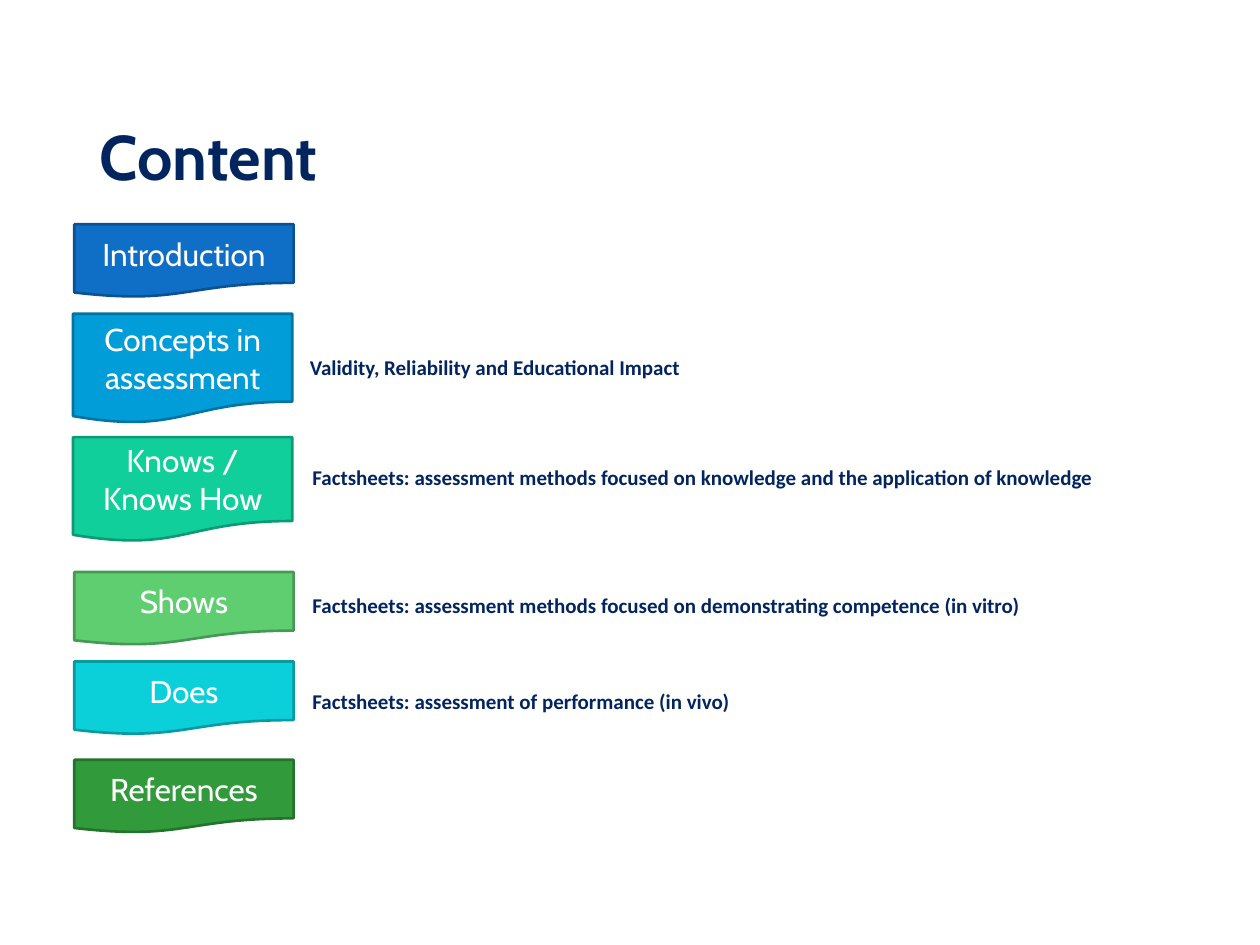
from dataclasses import dataclass

from pptx import Presentation
from pptx.dml.color import RGBColor
from pptx.enum.shapes import MSO_SHAPE
from pptx.enum.text import MSO_ANCHOR, PP_ALIGN
from pptx.util import Inches, Pt


@dataclass(frozen=True)
class Theme:
    navy: str = "02255F"
    white: str = "FFFFFF"
    heading_font: str = "Cabin"
    body_font: str = "Calibri"
    title_size: int = 36
    topic_size: int = 18
    detail_size: int = 12
    detail_leading: int = 14
    outline_width: float = 1.5


THEME = Theme()
TOPIC_WIDTH = 1.74

# Topic, left, top, height, fill, outline
TOPICS = [
    ("Introduction", 0.59, 1.78, 0.58, "0F6FC6", "0B5292"),
    ("Concepts in assessment", 0.58, 2.49, 0.87, "009DD9", "0074A1"),
    ("Knows / Knows How", 0.58, 3.47, 0.83, "10CF9B", "0C9973"),
    ("Shows", 0.59, 4.54, 0.58, "5ECE71", "469854"),
    ("Does", 0.59, 5.25, 0.58, "0BD0D9", "089AA1"),
    ("References", 0.59, 6.03, 0.58, "319B3B", "24732C"),
]

# Detail, left, top
DETAILS = [
    ("Validity, Reliability and Educational Impact", 2.3, 2.57),
    ("Factsheets: assessment methods focused on knowledge and the application of knowledge", 2.32, 3.44),
    ("Factsheets: assessment methods focused on demonstrating competence (in vitro)", 2.32, 4.46),
    ("Factsheets: assessment of performance (in vivo)", 2.32, 5.22),
]


def add_run(paragraph, text, font_name, size, color, bold=False):
    run = paragraph.add_run()
    run.text = text
    run.font.name = font_name
    run.font.size = Pt(size)
    run.font.bold = bold
    run.font.color.rgb = RGBColor.from_string(color)


def set_title(slide, text):
    title = slide.shapes.title
    title.left, title.top = Inches(0.69), Inches(0.88)
    title.width, title.height = Inches(9), Inches(0.7)
    title.text_frame.vertical_anchor = MSO_ANCHOR.MIDDLE
    heading = title.text_frame.paragraphs[0]
    heading.alignment = PP_ALIGN.LEFT
    add_run(heading, text, THEME.heading_font, THEME.title_size, THEME.navy, bold=True)


def add_topic(slide, text, left, top, height, fill, outline):
    topic = slide.shapes.add_shape(
        MSO_SHAPE.FLOWCHART_DOCUMENT,
        Inches(left), Inches(top), Inches(TOPIC_WIDTH), Inches(height),
    )
    topic.shadow.inherit = False
    topic.fill.solid()
    topic.fill.fore_color.rgb = RGBColor.from_string(fill)
    topic.line.color.rgb = RGBColor.from_string(outline)
    topic.line.width = Pt(THEME.outline_width)
    topic.text_frame.word_wrap = True
    topic.text_frame.vertical_anchor = MSO_ANCHOR.MIDDLE
    label = topic.text_frame.paragraphs[0]
    label.alignment = PP_ALIGN.CENTER
    add_run(label, text, THEME.heading_font, THEME.topic_size, THEME.white)


def add_detail(slide, text, left, top):
    detail = slide.shapes.add_textbox(Inches(left), Inches(top), Inches(7.37), Inches(0.79))
    frame = detail.text_frame
    frame.word_wrap = True
    frame.margin_left, frame.margin_top = Inches(0.16), Inches(0.25)
    line = frame.paragraphs[0]
    line.line_spacing = Pt(THEME.detail_leading)
    add_run(line, text, THEME.body_font, THEME.detail_size, THEME.navy, bold=True)


def main():
    deck = Presentation()
    deck.slide_width, deck.slide_height = Inches(10), Inches(7.5)
    slide = deck.slides.add_slide(deck.slide_layouts[5])

    # Heading
    set_title(slide, "Content")

    # Topic banners down the left
    for topic in TOPICS:
        add_topic(slide, *topic)

    # Explanations beside the banners
    for detail in DETAILS:
        add_detail(slide, *detail)

    deck.save("out.pptx")


if __name__ == "__main__":
    main()
